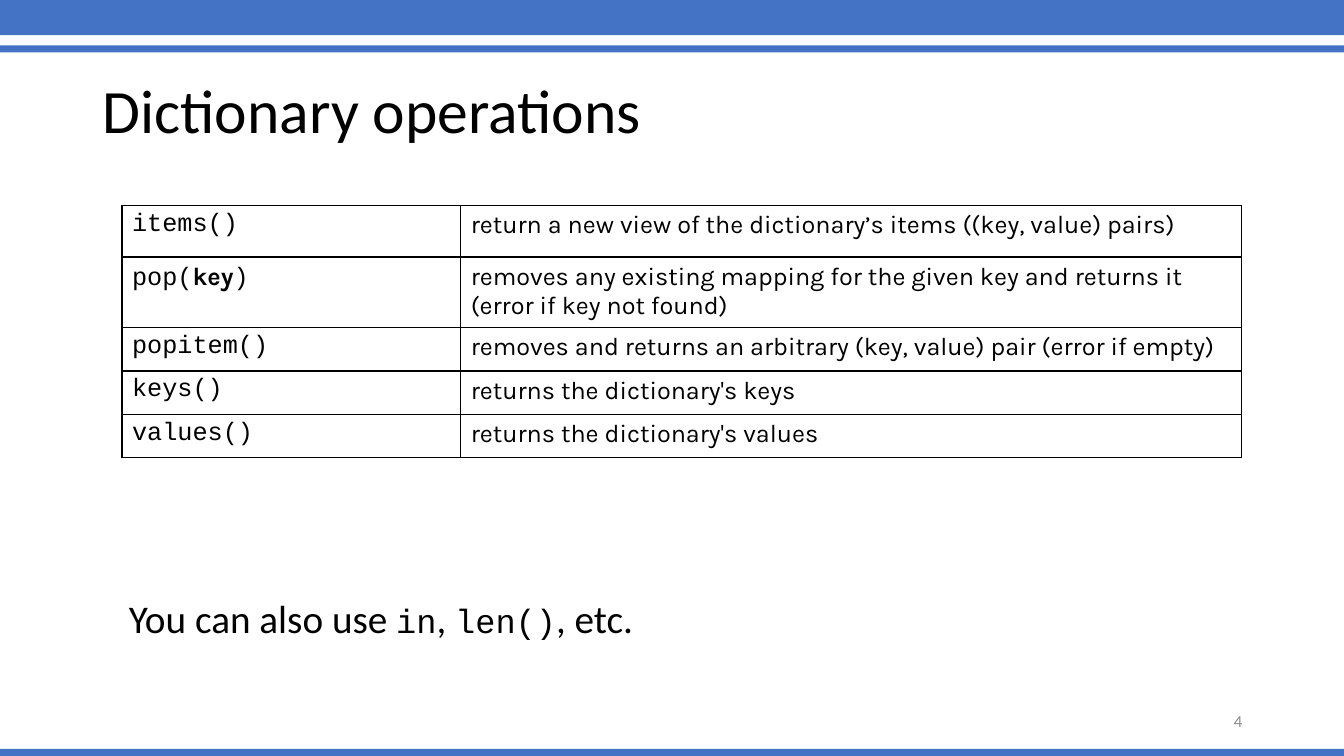
from lxml import etree
from pptx import Presentation
from pptx import util as u
from pptx.dml.color import RGBColor
from pptx.enum import shapes, text
from pptx.oxml import ns

HUES = {"bar": "4472C4", "ink": "000000", "page": "8C8C8C"}
FACES = {"sans": "Calibri", "code": "Courier New", "body": "Karla"}
SIZE = (13.33, 7.5)

BARS = [(-0.4, 5.07), (6, 0.93), (99.07, 0.93)]
LINES = [
    ((6.9, 5.33, 86.27, 19.33), {"line_spacing": 0.9}, "ink",
     [("Dictionary operations", "sans", 44)]),
    ((8.85, 72.4, 84.32, 19.33), {"line_spacing": 0.9}, "ink",
     [("You can also use ", "sans", 28), ("in", "code", 24), (", ", "sans", 28),
      ("len()", "code", 24), (", etc.", "sans", 28)]),
    ((70.67, 92.67, 22.5, 5.33), {"alignment": text.PP_ALIGN.RIGHT}, "page",
     [("4", "sans", 12)]),
]
GRID = (9.08, 27.2, 83.27, 33.47)
COLS = [25.2, 58.07]
ROWS = [6.8, 5.33, 5.73, 5.73, 5.73]
OPS = [
    ([("items()", "code", 18)],
     "return a new view of the dictionary’s items ((key, value) pairs)"),
    ([("pop(", "code", 18), ("key", "body", 18, True), (")", "code", 18)],
     "removes any existing mapping for the given key and returns it (error if key not found)"),
    ([("popitem()", "code", 18)],
     "removes and returns an arbitrary (key, value) pair (error if empty)"),
    ([("keys()", "code", 18)], "returns the dictionary's keys"),
    ([("values()", "code", 18)], "returns the dictionary's values"),
]


def wide(share):
    return u.Inches(SIZE[0] * share / 100)


def high(share):
    return u.Inches(SIZE[1] * share / 100)


def place(left, top, width, height):
    return wide(left), high(top), wide(width), high(height)


def apply(item, form):
    for name, value in form.items():
        setattr(item, name, value)


def write(para, runs, hue):
    for words, face, size, *bold in runs:
        run = para.add_run()
        run.text = words
        apply(run.font, {"name": FACES[face], "size": u.Pt(size), "bold": bool(bold)})
        run.font.color.rgb = RGBColor.from_string(HUES[hue])


def edge(cell):
    props = cell._tc.get_or_add_tcPr()
    for side in ("lnL", "lnR", "lnT", "lnB"):
        line = etree.SubElement(props, ns.qn("a:" + side), w=str(u.Pt(1)))
        fill = etree.SubElement(line, ns.qn("a:solidFill"))
        etree.SubElement(fill, ns.qn("a:srgbClr"), val=HUES["ink"])
    cell.fill.background()


def main():
    deck = Presentation()
    apply(deck, {"slide_width": wide(100), "slide_height": high(100)})
    parts = deck.slides.add_slide(deck.slide_layouts[6]).shapes

    for top, height in BARS:
        bar = parts.add_shape(shapes.MSO_SHAPE.RECTANGLE, *place(0, top, 100, height))
        bar.shadow.inherit = False
        bar.fill.solid()
        bar.fill.fore_color.rgb = RGBColor.from_string(HUES["bar"])
        bar.line.fill.background()

    for box, form, hue, runs in LINES:
        frame = parts.add_textbox(*place(*box)).text_frame
        apply(frame, {"word_wrap": True, "vertical_anchor": text.MSO_ANCHOR.MIDDLE})
        apply(frame.paragraphs[0], form)
        write(frame.paragraphs[0], runs, hue)

    host = parts.add_table(len(ROWS), len(COLS), *place(*GRID))
    table = host.table
    apply(table, {"first_row": False, "horz_banding": False})
    for col, share in zip(table.columns, COLS):
        col.width = wide(share)
    for row, share, (call, note) in zip(table.rows, ROWS, OPS):
        row.height = high(share)
        for cell, runs in zip(row.cells, (call, [(note, "body", 18)])):
            write(cell.text_frame.paragraphs[0], runs, "ink")
            edge(cell)
    host.height = high(GRID[3])

    deck.save("out.pptx")


if __name__ == "__main__":
    main()
